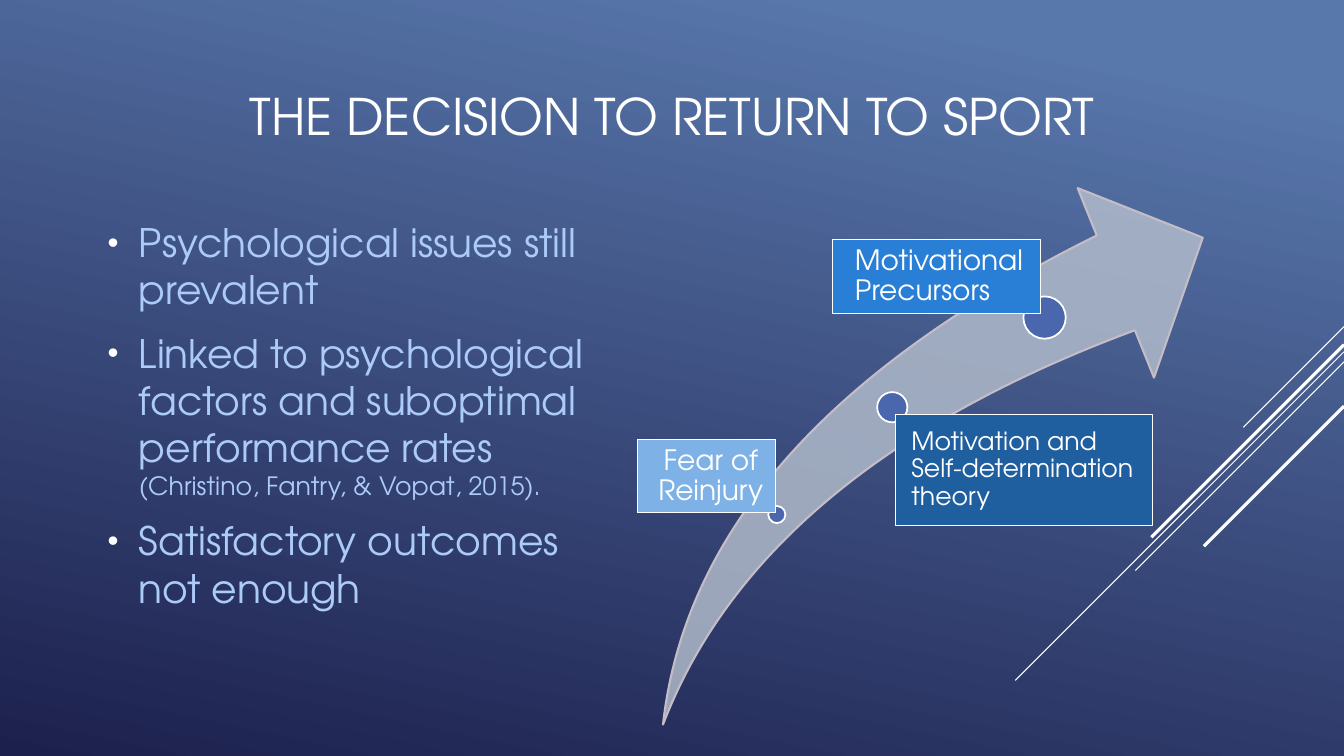
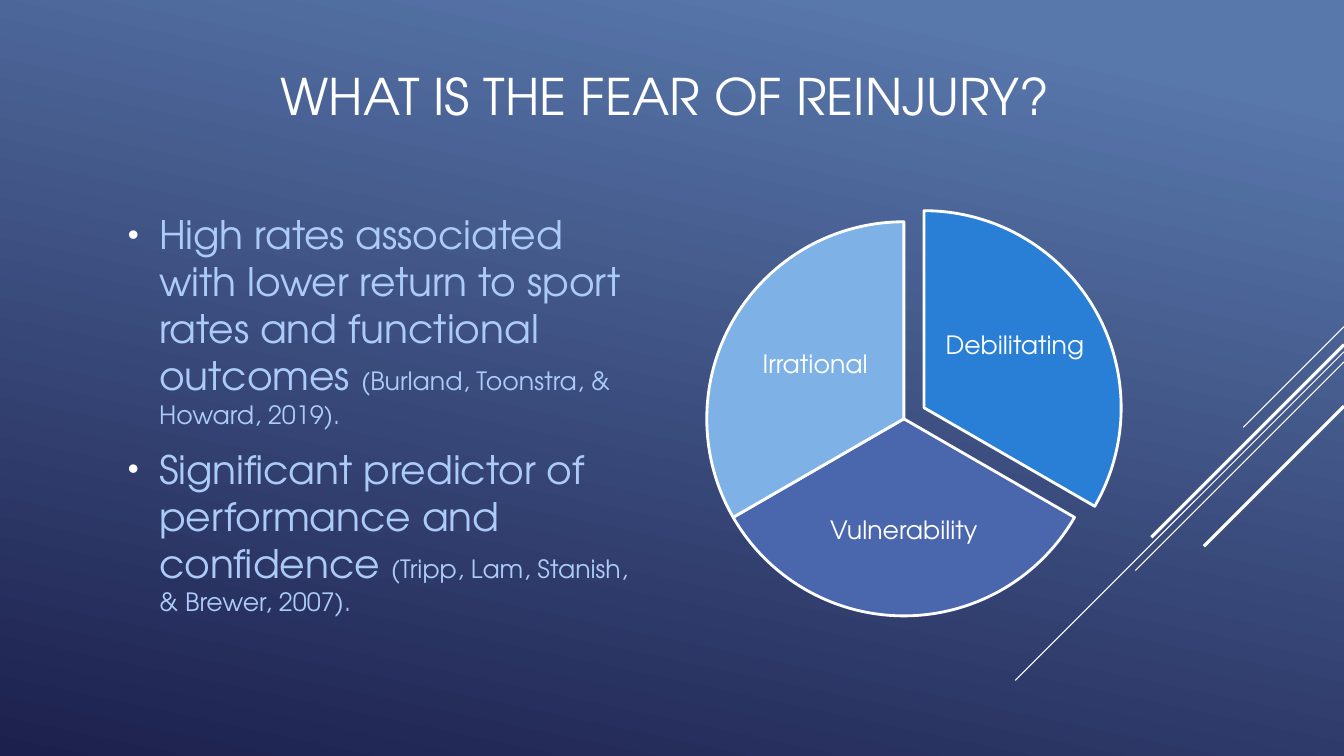
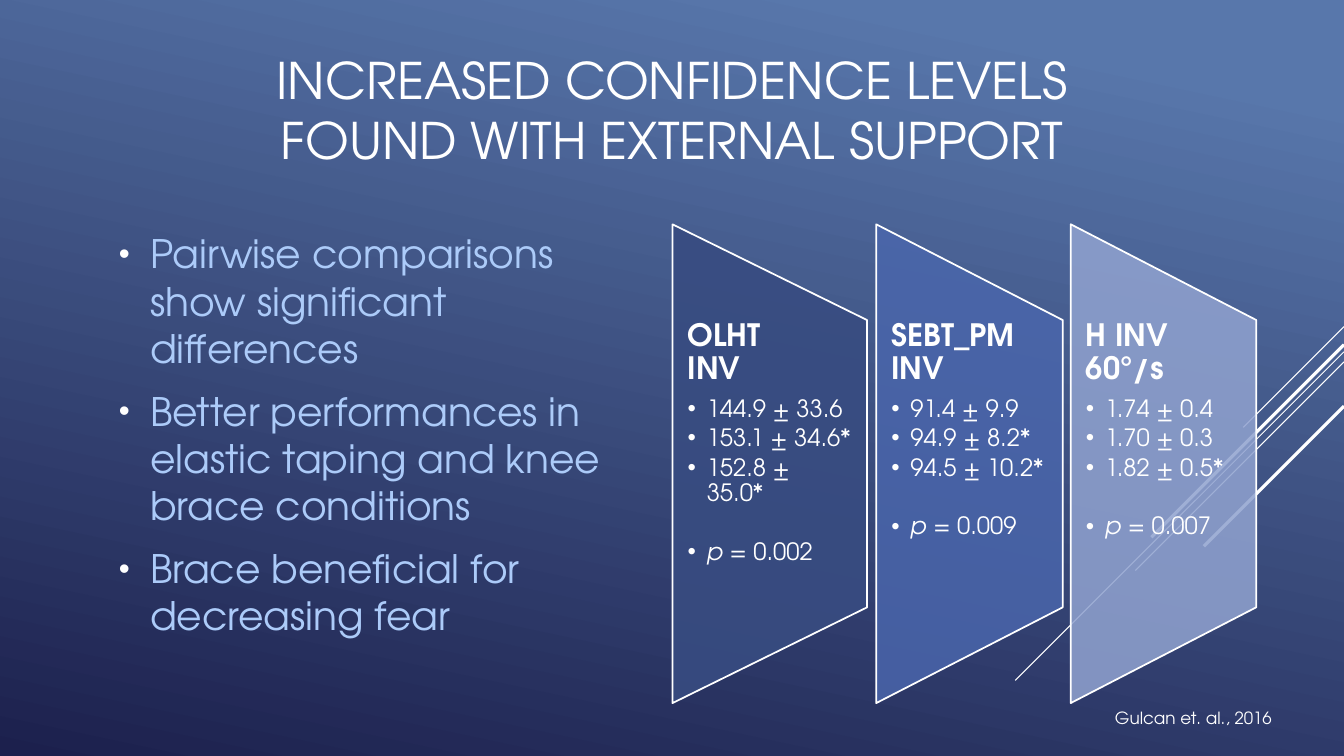
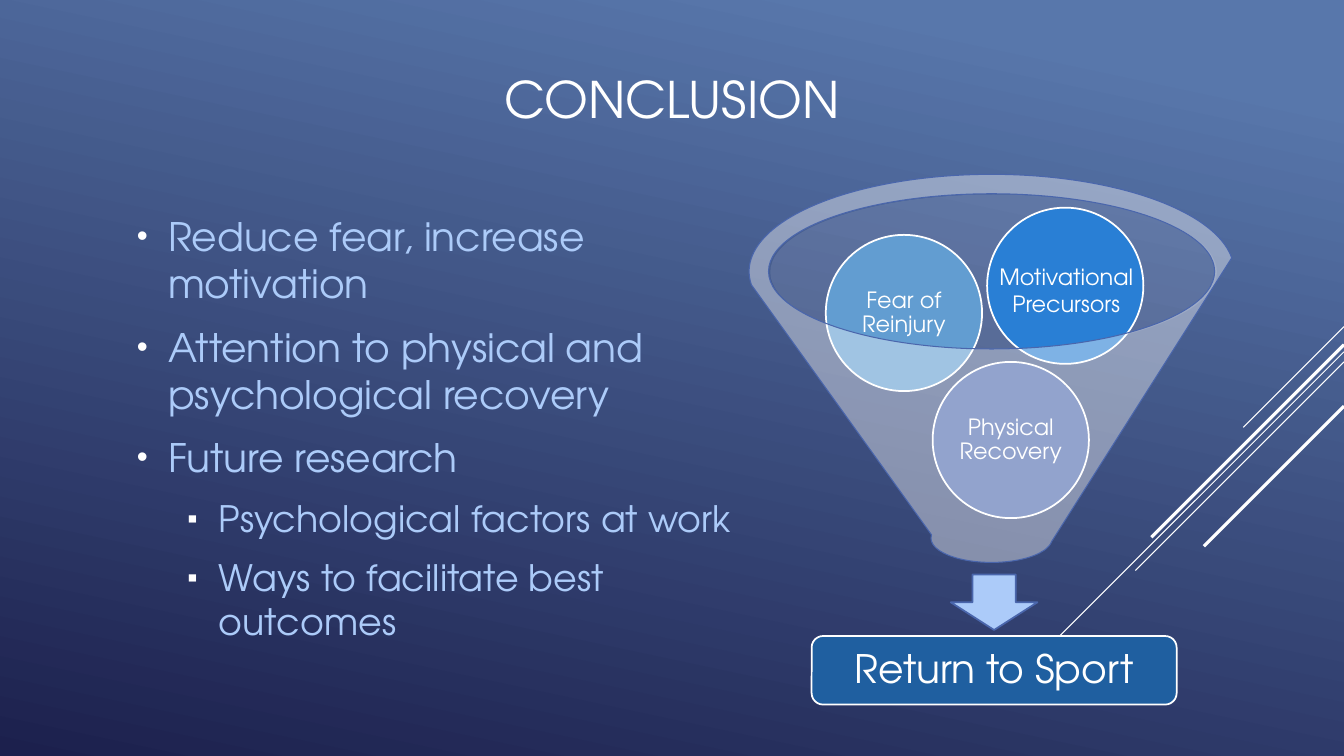
from lxml import etree
from pptx import Presentation
from pptx.dml.color import RGBColor
from pptx.enum.shapes import MSO_CONNECTOR, MSO_SHAPE
from pptx.enum.text import MSO_ANCHOR, PP_ALIGN
from pptx.oxml.ns import qn
from pptx.util import Inches, Pt

LEFT, CENTER = PP_ALIGN.LEFT, PP_ALIGN.CENTER
TOP, MIDDLE = MSO_ANCHOR.TOP, MSO_ANCHOR.MIDDLE
STRAIGHT = MSO_CONNECTOR.STRAIGHT
RECT, ROUND_RECT, OVAL = MSO_SHAPE.RECTANGLE, MSO_SHAPE.ROUNDED_RECTANGLE, MSO_SHAPE.OVAL
PIE, SWOOSH, FUNNEL = MSO_SHAPE.PIE, MSO_SHAPE.SWOOSH_ARROW, MSO_SHAPE.FUNNEL
DOWN_ARROW, PANEL = MSO_SHAPE.DOWN_ARROW, MSO_SHAPE.FLOWCHART_MANUAL_OPERATION

FONT = "TeX Gyre Adventor"
C = {
    "white": "FFFFFF", "body": "ACCBF9", "bg_light": "5877AB", "bg_dark": "1C204D",
    "indigo": "4A66AC", "sky": "7EB2E6", "blue": "297FD5", "deep": "1F5FA0",
    "steel": "629DD1", "navy": "384C81", "lavender": "90A2CF",
    "swoosh": "B2BCCB", "swoosh_line": "C4BCC6", "rim": "C1C6DB",
}
CITE = {"size": 18}
BODY = {"size": 28, "color": "body", "before": 5.6, "after": 6, "bullet": "•",
        "bullet_size": 80, "indent": 0.31, "hang": 0.31}
LABEL = {"align": CENTER, "anchor": MIDDLE, "spacing": 0.9}


def draw(s, kind, box, fill=None, line=None, width=1.25, alpha=None, rot=0, adj=()):
    """Add a preset shape, or a text box when kind is None."""
    box = [Inches(v) for v in box]
    if kind is None:
        return s.shapes.add_textbox(*box)
    sp = s.shapes.add_shape(kind, *box)
    sp.shadow.inherit = False
    sp.rotation = rot
    for i, value in enumerate(adj):
        sp.adjustments[i] = value
    sp.fill.solid()
    sp.fill.fore_color.rgb = RGBColor.from_string(C[fill])
    if alpha:
        clr = sp.fill._xPr.find(".//" + qn("a:srgbClr"))
        etree.SubElement(clr, qn("a:alpha"), val=str(alpha * 1000))
    if line:
        sp.line.color.rgb = RGBColor.from_string(C[line])
        sp.line.width = Pt(width)
    else:
        sp.line.fill.background()
    return sp


def write(sp, text, size=18, color="white", bold=False, italic=False, align=LEFT,
          anchor=TOP, ins=(0.1, 0.05, 0.1, 0.05), spacing=1.0, before=0, after=0,
          bullet=None, bullet_size=100, indent=0, hang=0):
    """Add one paragraph; text is a string or a list of (text, run format)."""
    tf = sp.text_frame
    tf.word_wrap = True
    tf.vertical_anchor = anchor
    tf.margin_left, tf.margin_top, tf.margin_right, tf.margin_bottom = map(Inches, ins)
    p = tf.paragraphs[0]
    if p.runs:
        p = tf.add_paragraph()
    p.alignment, p.line_spacing = align, spacing
    p.space_before, p.space_after = Pt(before), Pt(after)
    if bullet:
        pPr = p._p.get_or_add_pPr()
        pPr.set("marL", str(Inches(indent)))
        pPr.set("indent", str(-Inches(hang)))
        clr = etree.SubElement(pPr, qn("a:buClr"))
        etree.SubElement(clr, qn("a:srgbClr"), val=C["white"])
        etree.SubElement(pPr, qn("a:buSzPct"), val=str(bullet_size * 1000))
        etree.SubElement(pPr, qn("a:buFont"), typeface="Arial")
        etree.SubElement(pPr, qn("a:buChar"), char=bullet)
    for part, fmt in [(text, {})] if isinstance(text, str) else text:
        for i, row in enumerate(part.split("\n")):
            if i:
                p.add_line_break()
            r = p.add_run()
            r.text = row
            r.font.name = FONT
            r.font.size = Pt(fmt.get("size", size))
            r.font.bold = bold
            r.font.italic = fmt.get("italic", italic)
            r.font.color.rgb = RGBColor.from_string(C[color])


prs = Presentation()
prs.slide_width, prs.slide_height = Inches(13.33), Inches(7.5)
blank = prs.slide_layouts[6]

# Shared background
bg = prs.slide_master.background.fill
bg.gradient()
bg.gradient_angle = 258
for stop, (pos, name) in zip(bg.gradient_stops, [(0.1, "bg_light"), (1, "bg_dark")]):
    stop.position = pos
    stop.color.rgb = RGBColor.from_string(C[name])

# Titles and bullet lists
pages = [
    ("THE DECISION TO RETURN TO SPORT", 0.32, (0.97, 2.12, 4.94, 4.88), [
        "Psychological issues still prevalent",
        [("Linked to psychological factors and suboptimal performance rates ", {}),
         ("(Christino, Fantry, & Vopat, 2015).", CITE)],
        "Satisfactory outcomes not enough"]),
    ("WHAT IS THE FEAR OF REINJURY? ", 0.12, (1.17, 2.04, 5.37, 4.9), [
        [("High rates associated with lower return to sport rates and functional outcomes ", {}),
         ("(Burland, Toonstra, & Howard, 2019).", CITE)],
        [("Significant predictor of performance and confidence ", {}),
         ("(Tripp, Lam, Stanish, & Brewer, 2007).", CITE)]]),
    ("INCREASED CONFIDENCE LEVELS FOUND WITH EXTERNAL SUPPORT", 0.26, (1.08, 2.23, 5.28, 4.75), [
        "Pairwise comparisons show significant differences",
        "Better performances in elastic taping and knee brace conditions",
        "Brace beneficial for decreasing fear"]),
    ("CONCLUSION", 0.15, (1.26, 2.06, 6.16, 5.14), [
        "Reduce fear, increase motivation",
        "Attention to physical and psychological recovery",
        "Future research"]),
]
slides, bodies = [], []
for title, top, box, items in pages:
    s = prs.slides.add_slide(blank)
    write(draw(s, None, (2, top, 9.33, 1.65)), title, size=36, align=CENTER, anchor=MIDDLE)
    body = draw(s, None, box)
    for item in items:
        write(body, item, **BODY)
    slides.append(s)
    bodies.append(body)
decision, fear, support, conclusion = slides

# Shared diagonal lines, all at 45 degrees from the right edge, kept on the layout
for y, run, width in [(3.24, 1, 0.75), (3.49, 3.26, 0.75), (3.59, 2.07, 0.75),
                      (3.42, 1.91, 2.25), (4.03, 1.39, 2.25)]:
    line = decision.shapes.add_connector(STRAIGHT, Inches(13.33), Inches(y),
                                         Inches(13.33 - run), Inches(y + run))
    line.line.color.rgb = RGBColor.from_string(C["white"])
    line.line.width = Pt(width)
    etree.SubElement(line._element.spPr, qn("a:effectLst"))
    blank.shapes._spTree.append(line._element)

# Slide 1: rising arrow with three milestones
draw(decision, SWOOSH, (5.92, 2.37, 6.45, 4.03), "swoosh", "swoosh_line", 1.5,
     alpha=83, rot=344.5, adj=(0.25, 0.25))
milestones = [
    ((7.62, 5.02, 0.17), (6.32, 4.36, 1.37, 0.73), "sky", "Fear of Reinjury", 20, 0.09, CENTER),
    ((8.7, 3.89, 0.3), (8.88, 4.11, 2.55, 1.1), "deep",
     "Motivation and Self-determination theory", 18, 0.16, LEFT),
    ((10.15, 2.94, 0.42), (8.26, 2.38, 2.06, 0.73), "blue",
     "Motivational Precursors", 20, 0.22, LEFT),
]
for (x, y, d), box, fill, text, size, inset, align in milestones:
    draw(decision, OVAL, (x, y, d, d), "indigo", "white")
    write(draw(decision, RECT, box, fill, "white", 0.75), text, size=size, align=align,
          anchor=MIDDLE, ins=(inset, 0, 0, 0), spacing=0.9)

# Slide 2: three equal slices, the first pulled out
for x, y, fill, adj in [(7.21, 2.09, "blue", (162, 18)), (7.01, 2.2, "indigo", (18, 90)),
                        (7.01, 2.2, "sky", (90, 162))]:
    draw(fear, PIE, (x, y, 3.91, 3.91), fill, "white", 2, adj=adj)
for text, box in [("Vulnerability", (8.08, 4.67, 1.77, 1.21)),
                  ("Irrational", (7.42, 2.97, 1.33, 1.3))]:
    write(draw(fear, None, box), text, ins=(0.03,) * 4, **LABEL)
write(draw(fear, None, (9.28, 3.22, 2.01, 0.4)), "Debilitating")

# Slide 3: three panels, each a trapezoid turned on its side
PANEL_H, PANEL_MID = 4.75, 4.6
panels = [
    (6.67, 1.93, "navy", 90, "OLHT\nINV", ["144.9 ± 33.6", "153.1 ± 34.6*", "152.8 ± 35.0*"], "0.002"),
    (8.69, 1.85, "indigo", 84, "SEBT_PM\nINV", ["91.4 ± 9.9", "94.9 ± 8.2*", "94.5 ± 10.2*"], "0.009"),
    (10.62, 1.84, "lavender", 86, "H INV\n60°/s", ["1.74 ± 0.4", "1.70 ± 0.3", "1.82 ± 0.5*"], "0.007"),
]
for x, w, fill, alpha, head, values, p_value in panels:
    draw(support, PANEL, (x + (w - PANEL_H) / 2, PANEL_MID - w / 2, PANEL_H, w),
         fill, "white", alpha=alpha, rot=270)
    box = draw(support, None, (x, 3.17, w, 2.85))
    fmt = {"ins": (0.15, 0, 0.15, 0), "spacing": 0.9}
    write(box, head, size=22, bold=True, after=7.7, **fmt)
    fmt.update(size=17, after=2.6, bullet="•", indent=0.19, hang=0.19)
    for value in values:
        write(box, value, **fmt)
    write(box, [("p", {"italic": True}), (" = " + p_value, {})], before=21, **fmt)
write(draw(support, None, (10.96, 6.97, 2.76, 0.3)), "Gulcan et. al., 2016", size=12)

# Slide 4: sub-bullets, then a funnel leading to the result
for item in ["Psychological factors at work", "Ways to facilitate best outcomes"]:
    write(bodies[3], item, **{**BODY, "size": 26, "before": 5.2, "bullet": "▪", "indent": 0.81})
draw(conclusion, OVAL, (7.64, 1.93, 4.43, 1.54), "rim", alpha=16)
draw(conclusion, DOWN_ARROW, (9.43, 5.7, 0.86, 0.55), "body", "indigo")
result = draw(conclusion, ROUND_RECT, (8.05, 6.31, 3.62, 0.68), "deep", "white")
write(result, "Return to Sport", size=28, ins=(0, 0, 0, 0), **LABEL)
for x, y, fill, text in [(9.25, 3.59, "indigo", "Physical Recovery"),
                         (8.19, 2.33, "steel", "Fear of Reinjury"),
                         (9.79, 2.06, "blue", None)]:
    ball = draw(conclusion, OVAL, (x, y, 1.55, 1.55), fill, "white")
    if text:
        write(ball, text, size=16, ins=(0.02,) * 4, **LABEL)
draw(conclusion, FUNNEL, (7.43, 1.73, 4.81, 3.85), "white", "indigo", 0.75, alpha=40)
write(draw(conclusion, None, (9.8, 2.56, 1.55, 0.64)), "Motivational Precursors",
      size=16, align=CENTER)

prs.save("out.pptx")
